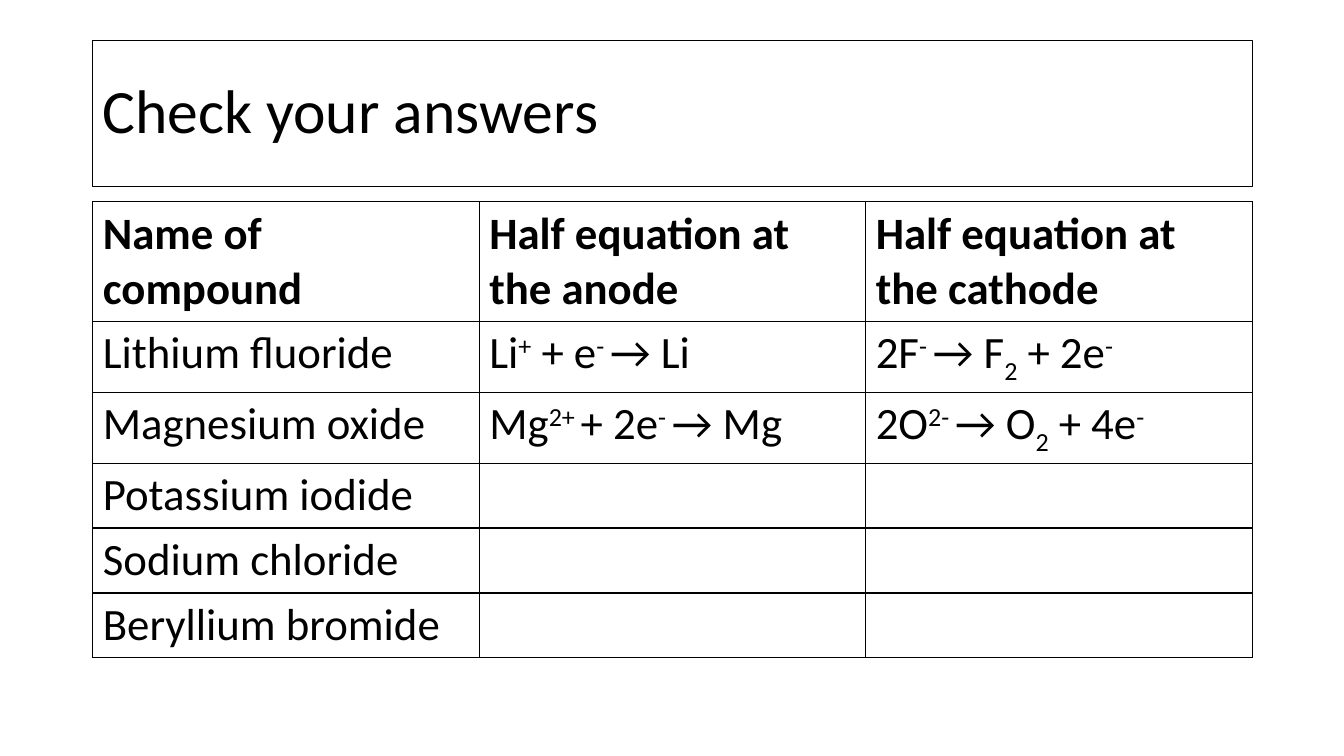
from dataclasses import dataclass

from lxml.etree import SubElement
from pptx import Presentation
from pptx.dml.color import RGBColor
from pptx.enum.shapes import MSO_SHAPE
from pptx.enum.text import MSO_ANCHOR, PP_ALIGN
from pptx.oxml.ns import qn
from pptx.slide import Slide
from pptx.util import Inches, Pt

MARGIN, COLUMN = 0.92, 11.5 / 3
BASELINES = {"^": "30000", "_": "-25000"}

HEADINGS = ["Name of compound", "Half equation at the anode", "Half equation at the cathode"]
COMPOUNDS = [
    ("Lithium fluoride",
     ["Li", "^+", " + e", "^- ", "→ Li"],
     ["2F", "^- ", "→ F", "_2", " + 2e", "^-"]),
    ("Magnesium oxide",
     ["Mg", "^2+ ", "+ 2e", "^- ", "→ Mg"],
     ["2O", "^2- ", "→ O", "_2", " + 4e", "^-"]),
    ("Potassium iodide", [], []),
    ("Sodium chloride", [], []),
    ("Beryllium bromide", [], []),
]


def colour(hex_code):
    """Turn a hex string into a colour."""
    return RGBColor.from_string(hex_code)


@dataclass
class AnswerSlide:
    """Draw elements on one slide, on a grid of three columns."""
    slide: Slide
    font: str = "Calibri"
    ink: str = "000000"
    paper: str = "FFFFFF"

    def add_runs(self, paragraph, parts, size, bold=False):
        """Add runs; a leading ^ raises a part and _ lowers it."""
        for part in parts:
            run = paragraph.add_run()
            run.text = part.lstrip("^_")
            run.font.name, run.font.size, run.font.bold = self.font, Pt(size), bold
            run.font.color.rgb = colour(self.ink)
            if part[0] in BASELINES:
                run.font._element.set("baseline", BASELINES[part[0]])

    def title(self, text, top, height):
        """Add an outlined heading across all columns."""
        box = self.slide.shapes.add_shape(
            MSO_SHAPE.RECTANGLE, Inches(MARGIN), Inches(top), Inches(3 * COLUMN), Inches(height))
        box.shadow.inherit = False
        box.fill.background()
        box.line.color.rgb = colour(self.ink)
        box.line.width = Pt(0.75)
        box.text_frame.word_wrap = True
        box.text_frame.vertical_anchor = MSO_ANCHOR.MIDDLE
        paragraph = box.text_frame.paragraphs[0]
        paragraph.alignment = PP_ALIGN.LEFT
        paragraph.line_spacing = 0.9
        self.add_runs(paragraph, [text], 44)

    def border(self, cell):
        """Rule all four sides of a cell."""
        properties = cell._tc.get_or_add_tcPr()
        for side in ("a:lnL", "a:lnR", "a:lnT", "a:lnB"):
            line = SubElement(properties, qn(side), w=str(Pt(1)))
            SubElement(SubElement(line, qn("a:solidFill")), qn("a:srgbClr"), val=self.ink)

    def table(self, rows, top, height, row_height):
        """Add a ruled table whose first row is bold."""
        frame = self.slide.shapes.add_table(
            len(rows), 3, Inches(MARGIN), Inches(top), Inches(3 * COLUMN), Inches(height))
        grid = frame.table
        grid.first_row = grid.horz_banding = False
        for row_index, row in enumerate(rows):
            grid.rows[row_index].height = Inches(row_height)
            for cell, parts in zip(grid.rows[row_index].cells, row):
                self.border(cell)
                cell.fill.solid()
                cell.fill.fore_color.rgb = colour(self.paper)
                self.add_runs(cell.text_frame.paragraphs[0], parts, 32, bold=row_index == 0)
        frame.height = Inches(height)


def main():
    """Build and save the slide."""
    deck = Presentation()
    deck.slide_width, deck.slide_height = Inches(13.33), Inches(7.5)
    answers = AnswerSlide(deck.slides.add_slide(deck.slide_layouts[6]))
    answers.title("Check your answers", top=0.4, height=1.45)
    rows = [[[heading] for heading in HEADINGS]]
    rows += [[[name], anode, cathode] for name, anode, cathode in COMPOUNDS]
    answers.table(rows, top=2, height=4.33, row_height=0.41)
    deck.save("out.pptx")


if __name__ == "__main__":
    main()
